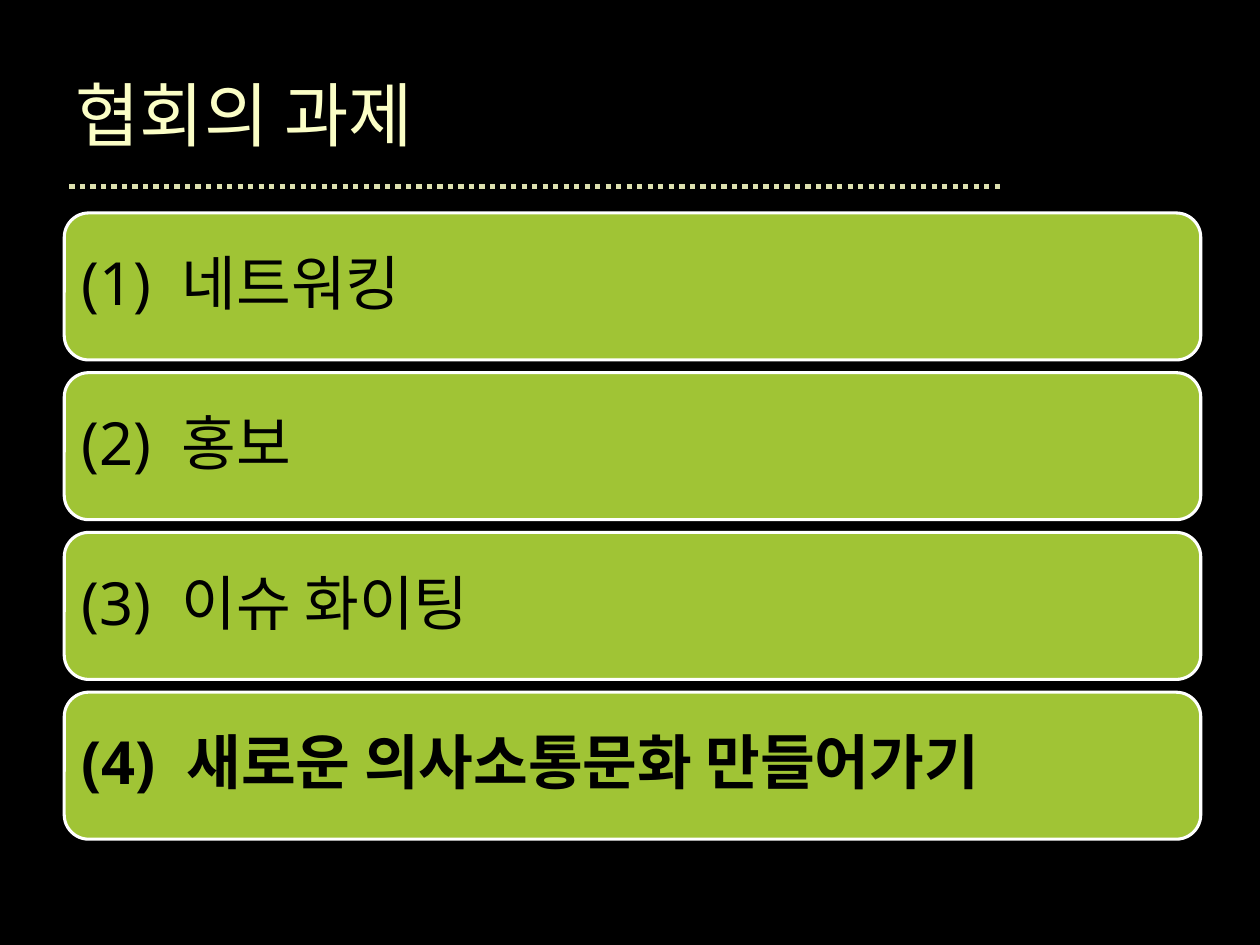
from pptx import Presentation, util as u
from pptx.dml.color import RGBColor
from pptx.enum import dml, shapes, text
from pptx.oxml.ns import qn
from lxml import etree

BLACK = RGBColor(0x00, 0x00, 0x00)
WHITE = RGBColor(0xFF, 0xFF, 0xFF)
CREAM = RGBColor(0xFB, 0xFE, 0xC6)
SAND = RGBColor(0xDD, 0xE0, 0xAF)
GREEN = RGBColor(0xA0, 0xC4, 0x35)

TITLE = "협회의 과제"
TASKS = ["네트워킹", "홍보", "이슈 화이팅", "새로운 의사소통문화 만들어가기"]
TITLE_BOX = (0.5, 0.39, 7.47, 1.02)
TASKS_BOX = (0.51, 1.69, 9.02, 4.97)
GAP_SHARE = 0.08  # gap between bars, as a share of one row's pitch


def add_run(paragraph, words, font, size, color, bold=False):
    run = paragraph.add_run()
    run.text = words
    run.font.name = font
    run.font.size = u.Pt(size)
    run.font.bold = bold
    run.font.color.rgb = color
    return run


def place_title(slide, box):
    left, top, width, height = map(u.Inches, box)
    title = slide.shapes.title
    title.left, title.top, title.width, title.height = left, top, width, height
    title.text_frame.vertical_anchor = text.MSO_ANCHOR.MIDDLE
    heading = title.text_frame.paragraphs[0]
    heading.alignment = text.PP_ALIGN.LEFT
    add_run(heading, TITLE, "Arial", 40, CREAM)

    rule_y = top + height + u.Inches(0.07)
    rule = slide.shapes.add_connector(
        shapes.MSO_CONNECTOR.STRAIGHT,
        left + u.Inches(0.05), rule_y, left + width, rule_y)
    rule.line.color.rgb = SAND
    rule.line.width = u.Pt(3)
    rule.line.dash_style = dml.MSO_LINE.ROUND_DOT
    etree.SubElement(rule._element.spPr, qn("a:effectLst"))


def place_task(slide, box, number, task, bold):
    bar = slide.shapes.add_shape(
        shapes.MSO_SHAPE.ROUNDED_RECTANGLE, *map(u.Inches, box))
    bar.shadow.inherit = False
    bar.fill.solid()
    bar.fill.fore_color.rgb = GREEN
    bar.line.color.rgb = WHITE
    bar.line.width = u.Pt(1.75)

    frame = bar.text_frame
    frame.word_wrap = True
    frame.vertical_anchor = text.MSO_ANCHOR.MIDDLE
    frame.margin_left = frame.margin_right = u.Inches(0.08)
    frame.margin_top = frame.margin_bottom = u.Inches(0.08)
    label = frame.paragraphs[0]
    label.alignment = text.PP_ALIGN.LEFT
    label.line_spacing = 0.9
    style = ("Noto Sans", 34, BLACK, bold)
    add_run(label, f"({number})", *style)
    space = add_run(label, " ", *style)
    space.font._element.set("spc", "880")  # widens the gap after the number
    add_run(label, task, *style)


def place_tasks(slide, box):
    """Stack equal bars down the box; the last task is stressed in bold."""
    left, top, width, height = box
    pitch = height / (len(TASKS) - GAP_SHARE)
    for row, task in enumerate(TASKS):
        bar_box = (left, top + row * pitch, width, pitch * (1 - GAP_SHARE))
        place_task(slide, bar_box, row + 1, task, row == len(TASKS) - 1)


def main():
    deck = Presentation()
    deck.slide_width, deck.slide_height = u.Inches(10), u.Inches(7.5)
    slide = deck.slides.add_slide(deck.slide_layouts.get_by_name("Title Only"))
    slide.background.fill.solid()
    slide.background.fill.fore_color.rgb = BLACK
    place_title(slide, TITLE_BOX)
    place_tasks(slide, TASKS_BOX)
    deck.save("out.pptx")


if __name__ == "__main__":
    main()
